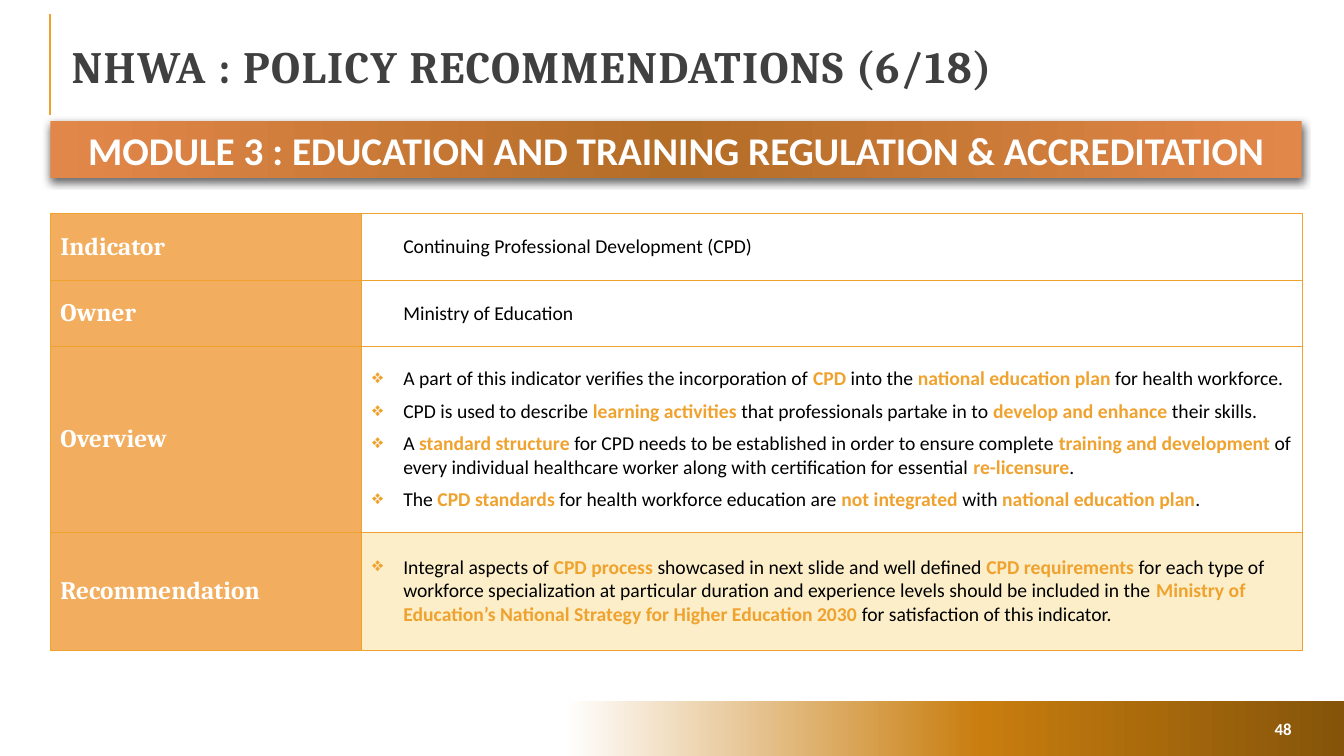
from lxml.etree import SubElement as Sub
from pptx import Presentation
from pptx.dml.color import RGBColor as Color
from pptx.enum.shapes import MSO_CONNECTOR as Link, MSO_SHAPE as Shape
from pptx.enum.text import MSO_ANCHOR as Anchor, PP_ALIGN as Align
from pptx.oxml.ns import qn
from pptx.util import Inches, Pt

GOLD = Color(0xF0, 0xA2, 0x2E)
LABEL = Color(0xF2, 0xAE, 0x5E)
CREAM = Color(0xFB, 0xEE, 0xC9)
WHITE = Color(0xFF, 0xFF, 0xFF)
BLACK = Color(0x00, 0x00, 0x00)
GRAY = Color(0x40, 0x40, 0x40)
AMBER = Color(0xC8, 0x7D, 0x0E)
BROWN = Color(0x85, 0x54, 0x0A)
RUST = Color(0xB4, 0x6D, 0x26)
CORAL = Color(0xE2, 0x87, 0x4A)

HEAD = {"name": "Cambria", "size": Pt(32), "bold": True}
SIDE = {"name": "Cambria", "size": Pt(18), "bold": True}
BODY = {"name": "Calibri", "size": Pt(14), "bold": False}
BAND = {"name": "Calibri", "size": Pt(28), "bold": True}
PAGE = {"name": "Calibri", "size": Pt(12), "bold": True}
INDENT = Inches(0.31)

ROWS = [
    ("Indicator", 0.66, WHITE, False, ["Continuing Professional Development (CPD)"]),
    ("Owner", 0.66, WHITE, False, ["Ministry of Education"]),
    ("Overview", 1.84, WHITE, True, [
        "A part of this indicator verifies the incorporation of *CPD* into the "
        "*national education plan *for health workforce.",
        "CPD is used to describe *learning activities *that professionals partake "
        "in to *develop and enhance *their skills.",
        "A *standard structure *for CPD needs to be established in order to ensure "
        "complete *training and development *of every individual healthcare worker "
        "along with certification for essential *re-licensure*.",
        "The *CPD standards *for health workforce education are *not integrated *"
        "with *national education plan*.",
    ]),
    ("Recommendation", 1.17, CREAM, True, [
        "Integral aspects of *CPD process *showcased in next slide and well defined "
        "*CPD requirements *for each type of workforce specialization at particular "
        "duration and experience levels should be included in the *Ministry of "
        "Education’s National Strategy for Higher Education 2030 *for satisfaction "
        "of this indicator.",
    ]),
]


def box(*sizes):
    return [Inches(size) for size in sizes]


def write(para, text, style, color):
    """Add text to a paragraph, with parts between asterisks bold and gold."""
    for i, part in enumerate(text.split("*")):
        run = para.add_run()
        run.text = part
        for key, value in style.items():
            setattr(run.font, key, value)
        run.font.color.rgb = GOLD if i % 2 else color
        if i % 2:
            run.font.bold = True
    return run


def blend(slide, place, stops):
    shape = slide.shapes.add_shape(Shape.RECTANGLE, *box(*place))
    shape.fill.gradient()
    shape.fill.gradient_angle = 0
    marks = shape._element.spPr.find(qn("a:gradFill")).find(qn("a:gsLst"))
    for old in list(marks):
        marks.remove(old)
    for spot, color in stops:
        mark = Sub(marks, qn("a:gs"), pos=str(spot * 1000))
        Sub(mark, qn("a:srgbClr"), val=str(color))
    shape.line.fill.background()
    shape.shadow.inherit = False
    return shape


def shade(shape):
    effects = shape._element.spPr.find(qn("a:effectLst"))
    outer = Sub(effects, qn("a:outerShdw"), blurRad=str(Pt(6)), dist=str(Pt(2)),
                dir="5400000", algn="ctr", rotWithShape="0")
    tint = Sub(outer, qn("a:srgbClr"), val=str(BLACK))
    Sub(tint, qn("a:alpha"), val="60000")


def rule(slide):
    line = slide.shapes.add_connector(Link.STRAIGHT, *box(0.5, 1.14, 0.5, 0.14))
    line.line.color.rgb = GOLD
    line.line.width = Pt(1.5)
    Sub(line._element.spPr, qn("a:effectLst"))


def title(slide, text):
    shape = slide.shapes.title
    shape.left, shape.top, shape.width, shape.height = box(0.61, 0.28, 12.3, 0.84)
    shape.text_frame.vertical_anchor = Anchor.MIDDLE
    para = shape.text_frame.paragraphs[0]
    para.alignment = Align.LEFT
    para.line_spacing = 0.8
    run = write(para, text, HEAD, GRAY)
    run.font._element.set("spc", "100")


def banner(slide, text):
    shape = blend(slide, (0.5, 1.2, 12.41, 0.57),
                  [(0, CORAL), (50, RUST), (100, CORAL)])
    shade(shape)
    para = shape.text_frame.paragraphs[0]
    para.alignment = Align.CENTER
    write(para, text, BAND, WHITE)


def number(slide, text):
    frame = slide.shapes.add_textbox(*box(11.85, 7.08, 1.06, 0.3)).text_frame
    frame.word_wrap = True
    frame.vertical_anchor = Anchor.MIDDLE
    para = frame.paragraphs[0]
    para.alignment = Align.RIGHT
    write(para, text, PAGE, WHITE)


def bullet(para):
    props = para._p.get_or_add_pPr()
    props.set("indent", str(-INDENT))
    tint = Sub(props, qn("a:buClr"))
    Sub(tint, qn("a:srgbClr"), val=str(GOLD))
    Sub(props, qn("a:buChar"), char="❖")


def paint(cell, color):
    """Give a cell its fill and gold borders."""
    props = cell._tc.get_or_add_tcPr()
    for side in ("lnL", "lnR", "lnT", "lnB"):
        edge = Sub(props, qn("a:" + side), w=str(Pt(0.75)))
        Sub(Sub(edge, qn("a:solidFill")), qn("a:srgbClr"), val=str(GOLD))
    cell.fill.solid()
    cell.fill.fore_color.rgb = color
    cell.vertical_anchor = Anchor.MIDDLE


def detail(cell, texts, marked):
    frame = cell.text_frame
    for i, text in enumerate(texts):
        para = frame.add_paragraph() if i else frame.paragraphs[0]
        para._p.get_or_add_pPr().set("marL", str(INDENT))
        if len(texts) > 1:
            para.space_after = Pt(6)
        if marked:
            bullet(para)
        write(para, text, BODY, BLACK)


def grid(slide):
    table = slide.shapes.add_table(len(ROWS), 2, *box(0.5, 2.12, 12.42, 4.33)).table
    table.first_row = table.horz_banding = False
    for col, width in zip(table.columns, box(3.09, 9.33)):
        col.width = width
    for i, (name, height, color, marked, texts) in enumerate(ROWS):
        table.rows[i].height = Inches(height)
        label, value = table.cell(i, 0), table.cell(i, 1)
        paint(label, LABEL)
        paint(value, color)
        write(label.text_frame.paragraphs[0], name, SIDE, WHITE)
        detail(value, texts, marked)


def main():
    deck = Presentation()
    deck.slide_width, deck.slide_height = box(13.33, 7.5)
    slide = deck.slides.add_slide(deck.slide_layouts[5])
    rule(slide)
    blend(slide, (0, 6.95, 13.33, 0.55), [(42, WHITE), (73, AMBER), (100, BROWN)])
    title(slide, "NHWA : POLICY RECOMMENDATIONS (6/18)")
    grid(slide)
    number(slide, "48")
    banner(slide, "MODULE 3 : EDUCATION AND TRAINING REGULATION & ACCREDITATION")
    deck.save("out.pptx")


if __name__ == "__main__":
    main()
